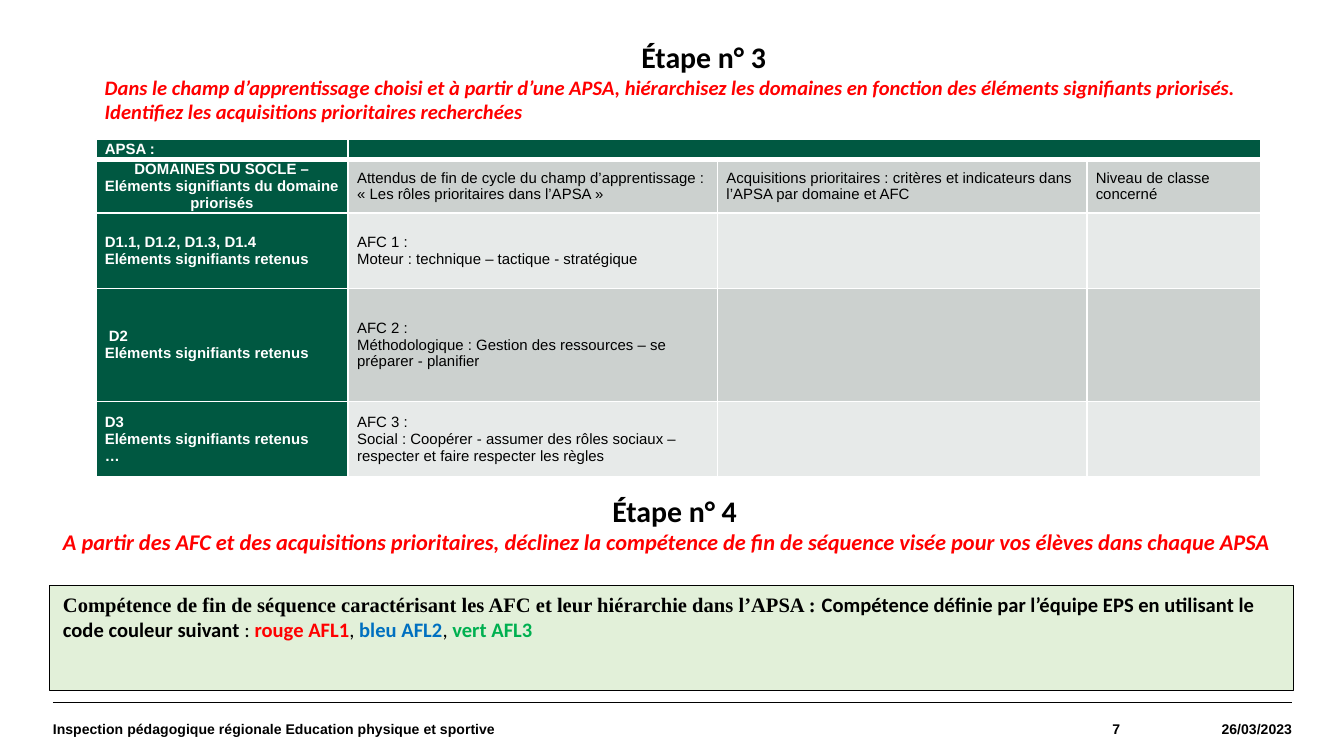
from lxml.etree import SubElement
from pptx import Presentation
from pptx.dml.color import RGBColor
from pptx.enum.shapes import MSO_CONNECTOR as Connector, MSO_SHAPE as Shape
from pptx.enum.text import MSO_ANCHOR as Anchor, PP_ALIGN as Align
from pptx.oxml.ns import qn
from pptx.util import Cm, Pt

COLORS = {
    "black": "000000", "white": "FFFFFF", "red": "FF0000", "blue": "0070C0",
    "green": "00B050", "header": "005841", "dark_band": "CCD1CF",
    "light_band": "E7EAE9", "panel": "E2F0D9",
}
FOOTER = {"name": "Arial", "size": Pt(7.5), "bold": True}
CELL = {"name": "Arial", "size": Pt(8), "bold": False}
CELL_HEADER = {**CELL, "bold": True}
STEP_TITLE = {"name": "Calibri", "size": Pt(16), "bold": True}
STEP_TASK = {"name": "Calibri", "bold": True, "italic": True}
PANEL = {"name": "Calibri", "size": Pt(11), "bold": True}
PANEL_PLAIN = {**PANEL, "bold": False}
PANEL_SERIF = {**PANEL, "name": "Times New Roman"}

COLUMN_WIDTHS = [4.77, 6.98, 6.98, 3.28]
ROW_HEIGHTS = [0.38, 1.02, 1.42, 2.14, 1.42]
ROWS = [
    [["APSA :"], [], [], []],
    [["DOMAINES DU SOCLE – Eléments signifiants du domaine priorisés"],
     ["Attendus de fin de cycle du champ d’apprentissage :",
      "« Les rôles prioritaires dans l’APSA »"],
     ["Acquisitions prioritaires : critères et indicateurs dans l’APSA par domaine et AFC"],
     ["Niveau de classe concerné"]],
    [["D1.1, D1.2, D1.3, D1.4", "Eléments signifiants retenus"],
     ["AFC 1 :", "Moteur : technique – tactique - stratégique"], [], []],
    [[" D2", "Eléments signifiants retenus"],
     ["AFC 2 :", "Méthodologique : Gestion des ressources – se préparer - planifier"],
     [], []],
    [["D3", "Eléments signifiants retenus", "…"],
     ["AFC 3 :",
      "Social : Coopérer - assumer des rôles sociaux – respecter et faire respecter les règles"],
     [], []],
]


def rgb(name):
    return RGBColor.from_string(COLORS[name])


def add_run(paragraph, text, style, color="black"):
    run = paragraph.add_run()
    run.text = text
    for attribute, value in style.items():
        setattr(run.font, attribute, value)
    run.font.color.rgb = rgb(color)


def set_margins(target, horizontal, vertical):
    target.margin_left = target.margin_right = Cm(horizontal)
    target.margin_top = target.margin_bottom = Cm(vertical)


def add_text_frame(slide, left, top, width, height):
    text_box = slide.shapes.add_textbox(Cm(left), Cm(top), Cm(width), Cm(height))
    text_box.text_frame.word_wrap = True
    return text_box.text_frame


def add_step(slide, left, top, width, height, title, task, task_size):
    """Add a centred step title with its task in red below."""
    frame = add_text_frame(slide, left, top, width, height)
    heading = frame.paragraphs[0]
    heading.alignment = Align.CENTER
    add_run(heading, title, STEP_TITLE)
    add_run(frame.add_paragraph(), task, {**STEP_TASK, "size": Pt(task_size)}, "red")


def set_borders(cell, bottom):
    properties = cell._tc.get_or_add_tcPr()
    for side, width in {"L": 1, "R": 1, "T": 1, "B": bottom}.items():
        line = SubElement(properties, qn(f"a:ln{side}"), w=str(Pt(width)))
        fill = SubElement(line, qn("a:solidFill"))
        SubElement(fill, qn("a:srgbClr"), val=COLORS["white"])


def fill_cell(cell, lines, is_header, color, bottom_border):
    set_borders(cell, bottom_border)
    cell.fill.solid()
    cell.fill.fore_color.rgb = rgb(color)
    cell.vertical_anchor = Anchor.MIDDLE
    set_margins(cell, 0.17, 0)
    frame = cell.text_frame
    for index, text in enumerate(lines):
        paragraph = frame.add_paragraph() if index else frame.paragraphs[0]
        add_run(paragraph, text, CELL_HEADER if is_header else CELL,
                "white" if is_header else "black")
    if not lines:
        SubElement(frame.paragraphs[0]._p, qn("a:endParaRPr"), sz="800")


def add_domain_table(slide, left, top):
    table = slide.shapes.add_table(
        len(ROWS), len(COLUMN_WIDTHS), Cm(left), Cm(top),
        Cm(sum(COLUMN_WIDTHS)), Cm(sum(ROW_HEIGHTS))).table
    for column, width in zip(table.columns, COLUMN_WIDTHS):
        column.width = Cm(width)
    for row, height in zip(table.rows, ROW_HEIGHTS):
        row.height = Cm(height)
    for i, row in enumerate(ROWS):
        band = "dark_band" if i % 2 else "light_band"
        for j, lines in enumerate(row):
            is_header = i == 0 or j == 0
            fill_cell(table.cell(i, j), lines, is_header,
                      "header" if is_header else band, 1 if i else 3)
    table.cell(0, 1).merge(table.cell(0, 3))
    table.cell(1, 0).text_frame.paragraphs[0].alignment = Align.CENTER


def add_competence_panel(slide, left, top, width, height):
    panel = slide.shapes.add_shape(
        Shape.RECTANGLE, Cm(left), Cm(top), Cm(width), Cm(height))
    panel.shadow.inherit = False
    panel.fill.solid()
    panel.fill.fore_color.rgb = rgb("panel")
    panel.line.color.rgb = rgb("black")
    panel.line.width = Pt(0.5)
    frame = panel.text_frame
    frame.word_wrap = True
    frame.vertical_anchor = Anchor.TOP
    paragraph = frame.paragraphs[0]
    paragraph.alignment = Align.LEFT
    for text, style, color in [
        ("Compétence de fin de séquence caractérisant les AFC et leur hiérarchie "
         "dans l’APSA :", PANEL_SERIF, "black"),
        (" Compétence définie par l’équipe EPS en utilisant le code couleur suivant ",
         PANEL, "black"),
        (": ", PANEL_PLAIN, "black"),
        ("rouge AFL1", PANEL, "red"),
        (", ", PANEL_PLAIN, "black"),
        ("bleu AFL2", PANEL, "blue"),
        (", ", PANEL_PLAIN, "black"),
        ("vert AFL3", PANEL, "green"),
    ]:
        add_run(paragraph, text, style, color)


def add_footer(slide, left, top, width, height):
    rule = slide.shapes.add_connector(
        Connector.STRAIGHT, Cm(left), Cm(top), Cm(left + width), Cm(top))
    rule.line.color.rgb = rgb("black")
    rule.line.width = Pt(0.8)
    SubElement(rule._element.spPr, qn("a:effectLst"))
    number_width, date_width = 3.76, 3.25
    label_width = width - number_width - date_width
    for text, part_width, alignment in [
        ("Inspection pédagogique régionale Education physique et sportive",
         label_width, Align.LEFT),
        ("7", number_width, Align.RIGHT),
        ("26/03/2023", date_width, Align.RIGHT),
    ]:
        frame = add_text_frame(slide, left, top, part_width, height)
        set_margins(frame, 0, 0)
        frame.vertical_anchor = Anchor.MIDDLE
        frame.paragraphs[0].alignment = alignment
        add_run(frame.paragraphs[0], text, FOOTER)
        left += part_width


def main():
    presentation = Presentation()
    presentation.slide_width, presentation.slide_height = Cm(25.4), Cm(14.29)
    slide = presentation.slides.add_slide(presentation.slide_layouts[6])
    add_footer(slide, 1, 13.28, 23.42, 1)
    add_domain_table(slide, 1.81, 2.63)
    add_step(slide, 1.73, 0.61, 23.14, 1.88, "Étape n° 3",
             "Dans le champ d’apprentissage choisi et à partir d’une APSA, hiérarchisez "
             "les domaines en fonction des éléments signifiants priorisés. "
             "Identifiez les acquisitions prioritaires recherchées", 11)
    add_competence_panel(slide, 0.94, 11.07, 23.5, 1.98)
    add_step(slide, 0.94, 9.19, 23.62, 1.45, "Étape n° 4",
             "A partir des AFC et des acquisitions prioritaires, déclinez la compétence "
             "de fin de séquence visée pour vos élèves dans chaque APSA", 12)
    presentation.save("out.pptx")


if __name__ == "__main__":
    main()
